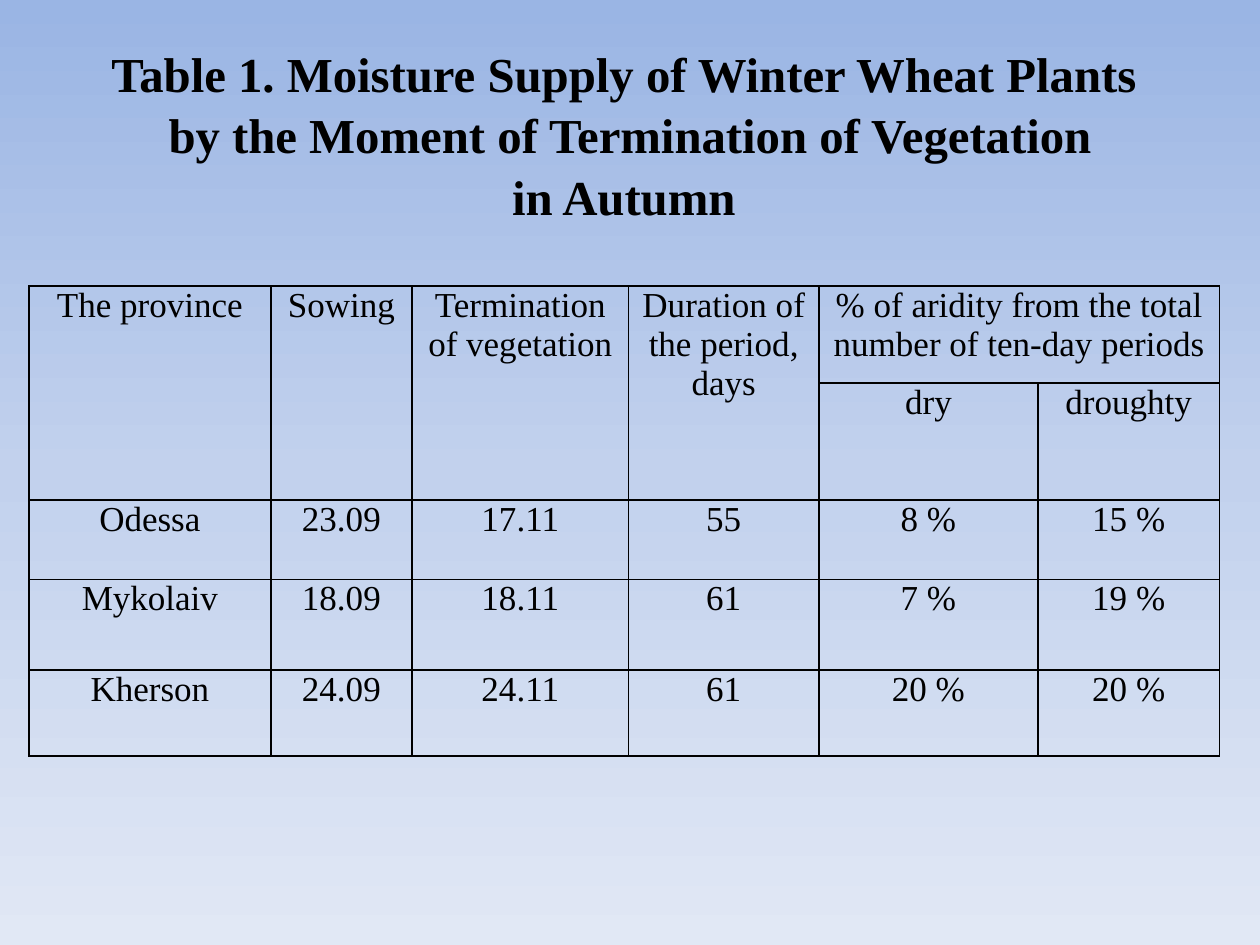
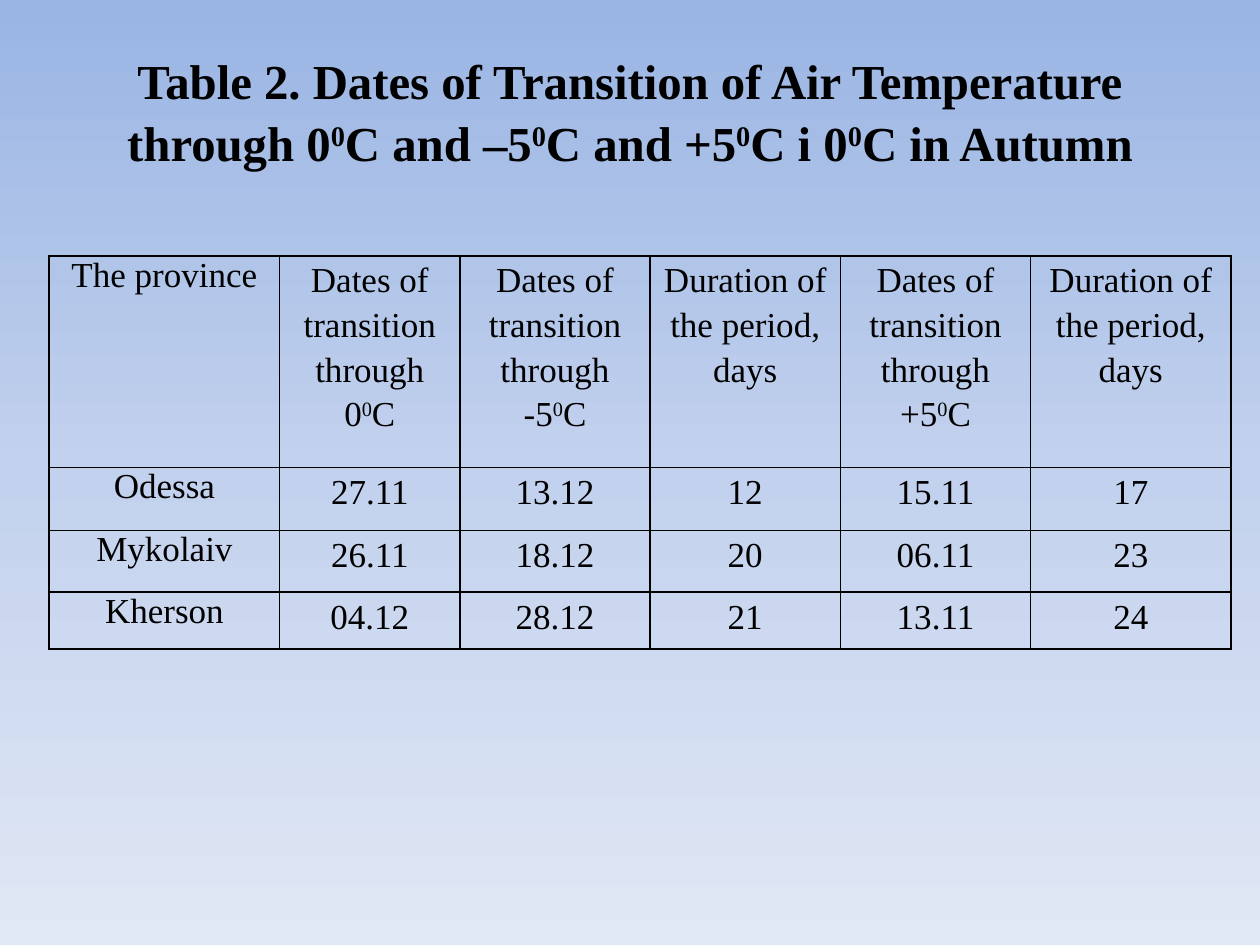
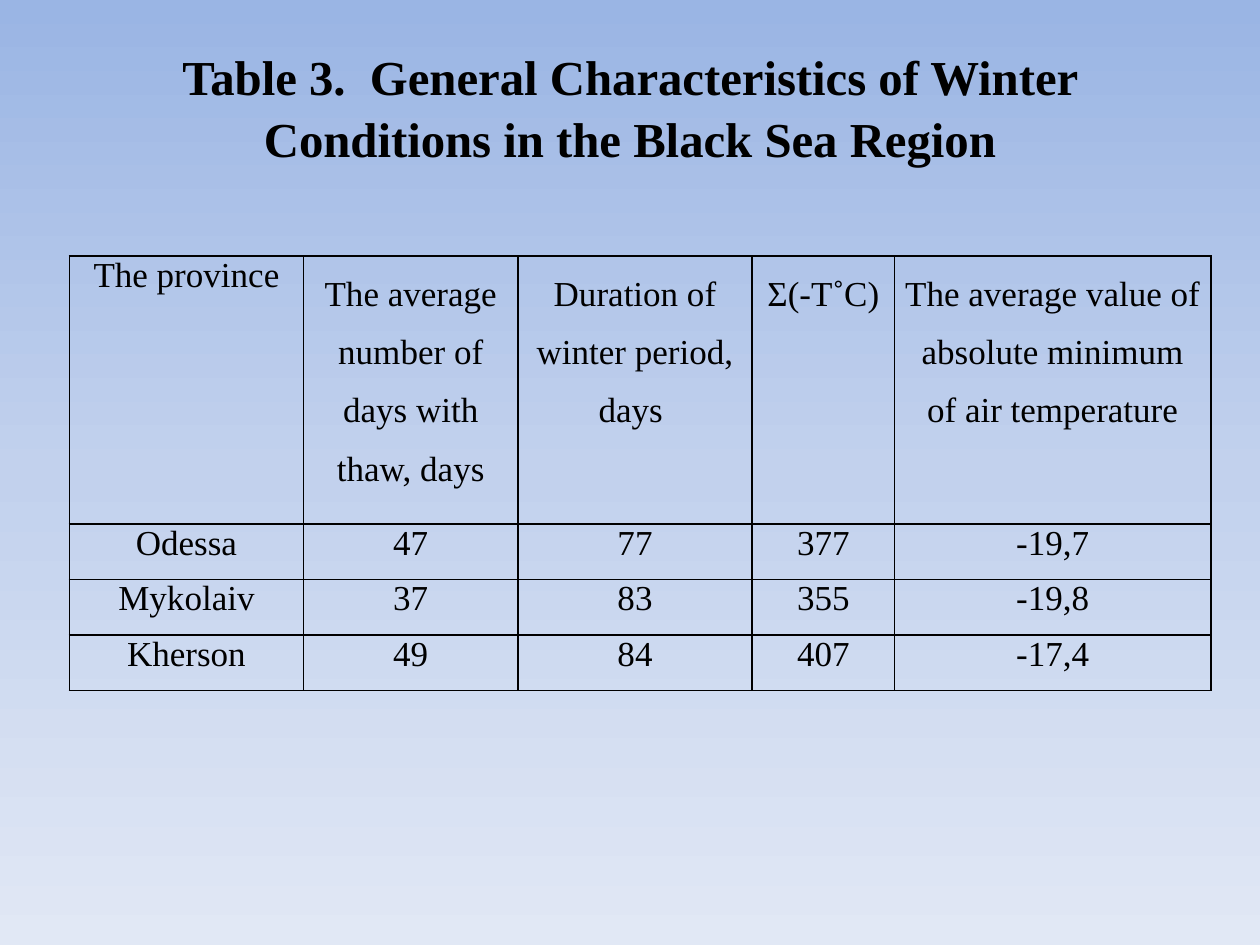
from copy import deepcopy

from lxml.etree import SubElement
from pptx import Presentation
from pptx.dml.color import RGBColor
from pptx.enum.text import MSO_ANCHOR, PP_ALIGN
from pptx.oxml.ns import qn
from pptx.util import Inches, Pt

# Shared look
BLACK = RGBColor(0x00, 0x00, 0x00)
STOPS = {
    0: RGBColor(0x9A, 0xB5, 0xE4),
    0.5: RGBColor(0xC2, 0xD1, 0xED),
    1: RGBColor(0xE1, 0xE8, 0xF5),
}
TITLE_BOX = (0.5, 0.3, 9, 1.25)
TITLE_FONT = {"name": "Times New Roman", "size": Pt(27.9), "bold": True}
CELL_FONT = {"name": "Times New Roman", "size": Pt(20), "bold": False}
INSETS = {
    "margin_left": Inches(0.07), "margin_right": Inches(0.07),
    "margin_top": 0, "margin_bottom": 0,
}
PLAIN = {"first_row": False, "horz_banding": False}

# One entry per slide; ^ encloses raised text, \v breaks a line
TABLES = [
    {
        "title": "Table 1. Moisture Supply of Winter Wheat Plants \v"
                 "by the Moment of Termination of Vegetation\vin Autumn ",
        "inset": 0.02,
        "at": (0.23, 2.27),
        "cols": [1.92, 1.12, 1.72, 1.51, 1.74, 1.44],
        "rows": [0.77, 0.93, 0.63, 0.72, 0.68],
        "spans": [(0, c, 1, c) for c in range(4)] + [(0, 4, 0, 5)],
        "leads": (1, 1),
        "cells": [
            ["The province", "Sowing", "Termination of vegetation",
             "Duration of the period, days",
             "% of aridity from the total number of ten-day periods", ""],
            ["", "", "", "", "dry", "droughty"],
            ["Odessa", "23.09", "17.11", "55", "8 %", "15 %"],
            ["Mykolaiv", "18.09", "18.11", "61", "7 %", "19 %"],
            ["Kherson", "24.09", "24.11", "61", "20 %", "20 %"],
        ],
    },
    {
        "title": "Table 2. Dates of Transition of Air Temperature through "
                 "0^0^С and –5^0^С and +5^0^С і 0^0^С in Autumn",
        "inset": 0.08,
        "at": (0.39, 2.03),
        "cols": [1.83, 1.43, 1.51, 1.51, 1.51, 1.59],
        "rows": [1.68, 0.5, 0.49, 0.45],
        "spans": [],
        "leads": (1.15, 1.15),
        "cells": [
            ["The province", "Dates of transition through 0^0^С",
             "Dates of transition through\v-5^0^С",
             "Duration of the period, days",
             "Dates of transition through +5^0^С",
             "Duration of the period, days"],
            ["Odessa", "27.11", "13.12", "12", "15.11", "17"],
            ["Mykolaiv", "26.11", "18.12", "20", "06.11", "23"],
            ["Kherson", "04.12", "28.12", "21", "13.11", "24"],
        ],
    },
    {
        "title": "Table 3.  General Characteristics of Winter Conditions "
                 "in the Black Sea Region",
        "inset": 0.05,
        "at": (0.55, 2.03),
        "cols": [1.86, 1.7, 1.86, 1.13, 2.51],
        "rows": [2.13, 0.44, 0.44, 0.44],
        "spans": [],
        "leads": (1.5, 1),
        "cells": [
            ["The province", "The average number of days with thaw, days",
             "Duration of winter period, days ", "Σ(-Т˚С)",
             "The average value of absolute minimum of air temperature"],
            ["Odessa", "47", "77", "377", "-19,7"],
            ["Mykolaiv", "37", "83", "355", "-19,8"],
            ["Kherson", "49", "84", "407", "-17,4"],
        ],
    },
]


def apply(item, values):
    for name, value in values.items():
        setattr(item, name, value)


def write(frame, text, style, lead):
    """Fill a text frame with one centred paragraph."""
    para = frame.paragraphs[0]
    apply(para, {"alignment": PP_ALIGN.CENTER, "line_spacing": lead})
    for i, part in enumerate(text.split("^")):
        for j, line in enumerate(part.split("\v")):
            if j:
                para.add_line_break()
            if not line:
                continue
            run = para.add_run()
            run.text = line
            apply(run.font, style)
            run.font.color.rgb = BLACK
            if i % 2:
                run.font._element.set("baseline", "30000")


def paint(master):
    """Give every slide the three-stop gradient."""
    fill = master.background.fill
    fill.gradient()
    fill.gradient_angle = 270
    first = next(master.element.iter(qn("a:gs")))
    first.addnext(deepcopy(first))
    for stop, (place, color) in zip(fill.gradient_stops, STOPS.items()):
        stop.position = place
        stop.color.rgb = color


def add_title(slide, box, text, inset):
    title = slide.shapes.title
    names = ("left", "top", "width", "height")
    apply(title, dict(zip(names, map(Inches, box))))
    frame = title.text_frame
    apply(frame, {"vertical_anchor": MSO_ANCHOR.TOP, "word_wrap": True,
                  "margin_top": Inches(inset), "margin_bottom": 0})
    write(frame, text, TITLE_FONT, 1.05)


def rule(cell):
    """Draw thin black borders and clear the fill."""
    props = cell._tc.get_or_add_tcPr()
    for side in ("lnL", "lnR", "lnT", "lnB"):
        line = SubElement(props, qn(f"a:{side}"), w=str(Pt(1)))
        solid = SubElement(line, qn("a:solidFill"))
        SubElement(solid, qn("a:srgbClr"), val=str(BLACK))
    cell.fill.background()


def add_grid(slide, data):
    cols, rows = data["cols"], data["rows"]
    box = (*data["at"], sum(cols), sum(rows))
    table = slide.shapes.add_table(len(rows), len(cols), *map(Inches, box)).table
    apply(table, PLAIN)
    for col, width in zip(table.columns, cols):
        col.width = Inches(width)
    for row, height in zip(table.rows, rows):
        row.height = Inches(height)
    head, body = data["leads"]
    for r, texts in enumerate(data["cells"]):
        for c, text in enumerate(texts):
            cell = table.cell(r, c)
            apply(cell, INSETS)
            rule(cell)
            lead = 1 if c == 0 else body if r else head
            write(cell.text_frame, text, CELL_FONT, lead)
    for top, left, low, right in data["spans"]:
        table.cell(top, left).merge(table.cell(low, right))


def main():
    deck = Presentation()
    deck.slide_width, deck.slide_height = Inches(10), Inches(7.5)
    paint(deck.slide_master)
    for data in TABLES:
        slide = deck.slides.add_slide(deck.slide_layouts[5])
        add_title(slide, TITLE_BOX, data["title"], data["inset"])
        add_grid(slide, data)
    deck.save("out.pptx")


if __name__ == "__main__":
    main()
